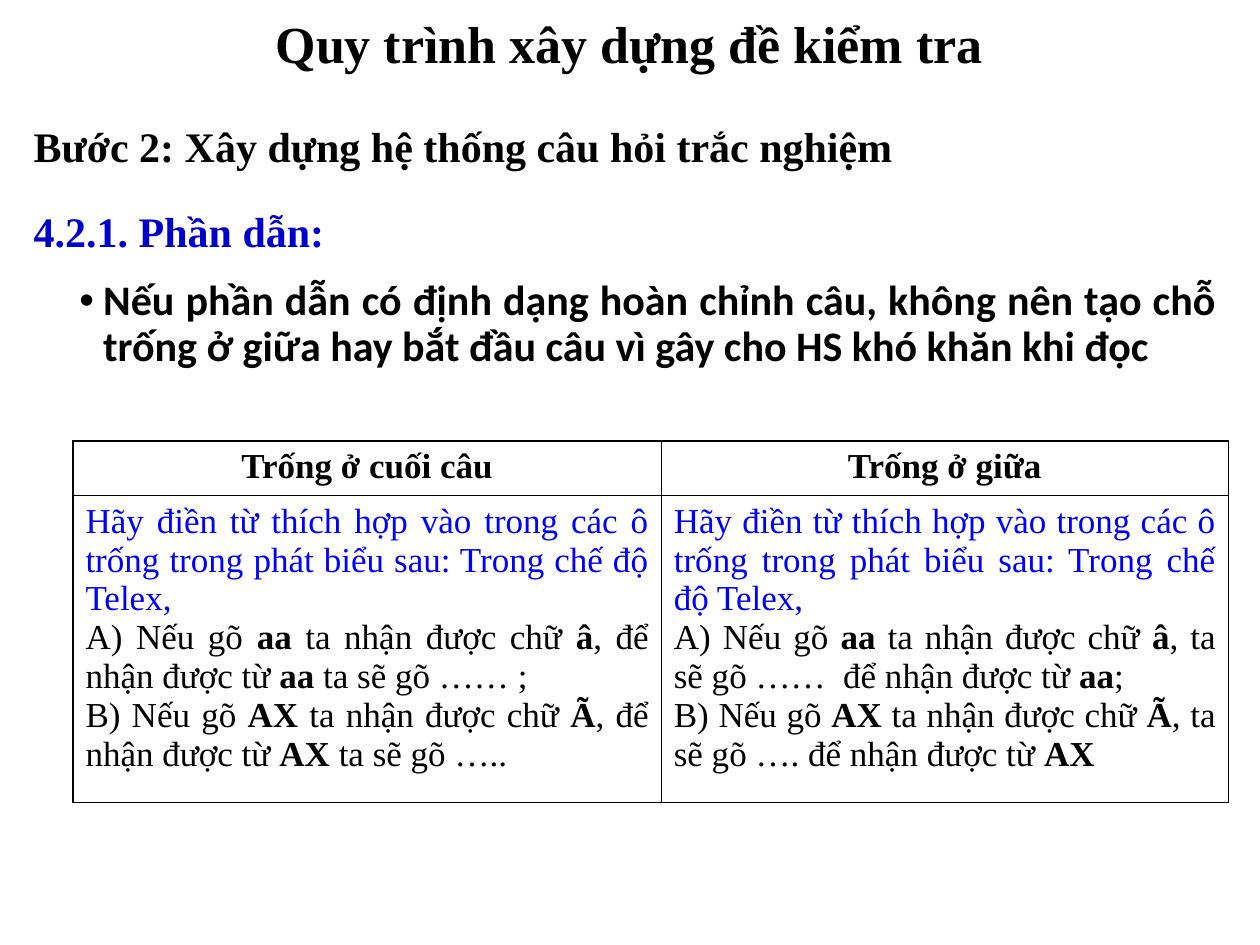
import pptx
import pptx.dml.color
import pptx.enum.text
import pptx.oxml
import pptx.oxml.ns
import pptx.util
from pptx.util import Cm

ALIGN = pptx.enum.text.PP_ALIGN
ANCHOR = pptx.enum.text.MSO_ANCHOR
SERIF = "Times New Roman"
BLACK, BLUE, NAVY = "000000", "0000FF", "0000CC"

LEAD = ("Hãy điền từ thích hợp vào trong các ô trống trong phát biểu sau: "
        "Trong chế độ Telex, ")
HEADS = ["Trống ở cuối câu", "Trống ở giữa"]
# Asterisks enclose bold words.
ITEMS = [
    ["A) Nếu gõ *aa* ta nhận được chữ *â*, để nhận được từ *aa* ta sẽ gõ …… ; ",
     "B) Nếu gõ *AX* ta nhận được chữ *Ã*, để nhận được từ *AX* ta sẽ gõ ….."],
    ["A) Nếu gõ *aa* ta nhận được chữ *â*, ta sẽ gõ ……  để nhận được từ *aa*; ",
     "B) Nếu gõ *AX* ta nhận được chữ *Ã*, ta sẽ gõ …. để nhận được từ *AX*"],
]


def paint(code):
    return pptx.dml.color.RGBColor.from_string(code)


def put(item, style):
    for name, value in style.items():
        setattr(item, name, value)


def write(para, text, size, color=BLACK, face=SERIF, **form):
    """Fill a paragraph, with bold between asterisks."""
    put(para, form)
    for i, part in enumerate(text.split("*")):
        if part:
            run = para.add_run()
            run.text = part
            put(run.font, {"size": pptx.util.Pt(size), "name": face,
                           "bold": i % 2 == 1})
            run.font.color.rgb = paint(color)


def add_text(slide, box, text, size, anchor=ANCHOR.TOP, **form):
    frame = slide.shapes.add_textbox(*map(Cm, box)).text_frame
    put(frame, {"word_wrap": True, "vertical_anchor": anchor})
    para = frame.paragraphs[0]
    write(para, text, size, **form)
    return para


def add_mark(para, indent):
    """Give a paragraph a hanging bullet."""
    props = para._p.get_or_add_pPr()
    props.set("marL", str(indent))
    props.set("indent", str(-indent))
    ns = pptx.oxml.ns.nsdecls("a")
    for tag in ('buFont {} typeface="Arial"', 'buChar {} char="•"'):
        props.append(pptx.oxml.parse_xml(f"<a:{tag.format(ns)}/>"))


def frame_cell(cell):
    """Draw black lines on all four sides and leave the cell unfilled."""
    props = cell._tc.get_or_add_tcPr()
    for side in ("lnL", "lnR", "lnT", "lnB"):
        props.append(pptx.oxml.parse_xml(
            f'<a:{side} {pptx.oxml.ns.nsdecls("a")} w="{pptx.util.Pt(1)}">'
            f'<a:solidFill><a:srgbClr val="{BLACK}"/></a:solidFill>'
            f'</a:{side}>'))
    cell.fill.background()


def add_grid(slide):
    table = slide.shapes.add_table(
        2, 2, Cm(1.47), Cm(8.89), Cm(23.29), Cm(6.25)).table
    put(table, {"first_row": False, "horz_banding": False})
    for col, width in zip(table.columns, (11.86, 11.43)):
        col.width = Cm(width)
    for row, height in zip(table.rows, (1.07, 5.18)):
        row.height = Cm(height)
    for i, (head, items) in enumerate(zip(HEADS, ITEMS)):
        top, body = table.cell(0, i), table.cell(1, i)
        write(top.text_frame.paragraphs[0], f"*{head}*", 20,
              alignment=ALIGN.CENTER)
        frame = body.text_frame
        write(frame.paragraphs[0], LEAD, 20, BLUE, alignment=ALIGN.JUSTIFY)
        for item in items:
            write(frame.add_paragraph(), item, 20, alignment=ALIGN.JUSTIFY)
        frame_cell(top)
        frame_cell(body)


def main():
    deck = pptx.Presentation()
    put(deck, {"slide_width": Cm(25.4), "slide_height": Cm(19.05)})
    slide = deck.slides.add_slide(deck.slide_layouts[6])
    add_text(slide, (1.75, 0.2, 21.89, 1.47),
             "*Quy trình xây dựng đề kiểm tra*", 29.7, ANCHOR.MIDDLE,
             alignment=ALIGN.CENTER, line_spacing=0.9)
    add_text(slide, (0.43, 2.31, 24.77, 1.27),
             "*Bước 2: Xây dựng hệ thống câu hỏi trắc nghiệm*", 24)
    add_text(slide, (0.43, 4.01, 24.56, 1.27), "*4.2.1. Phần dẫn:*", 24,
             color=NAVY)
    advice = add_text(
        slide, (1.35, 5.51, 23.42, 3.18),
        "*Nếu phần dẫn có định dạng hoàn chỉnh câu, không nên tạo chỗ trống "
        "ở giữa hay bắt đầu câu vì gây cho HS khó khăn khi đọc*", 24,
        face="Calibri", alignment=ALIGN.JUSTIFY, line_spacing=0.9,
        space_before=pptx.util.Pt(3))
    add_mark(advice, Cm(0.48))
    add_grid(slide)
    deck.save("out.pptx")


if __name__ == "__main__":
    main()
